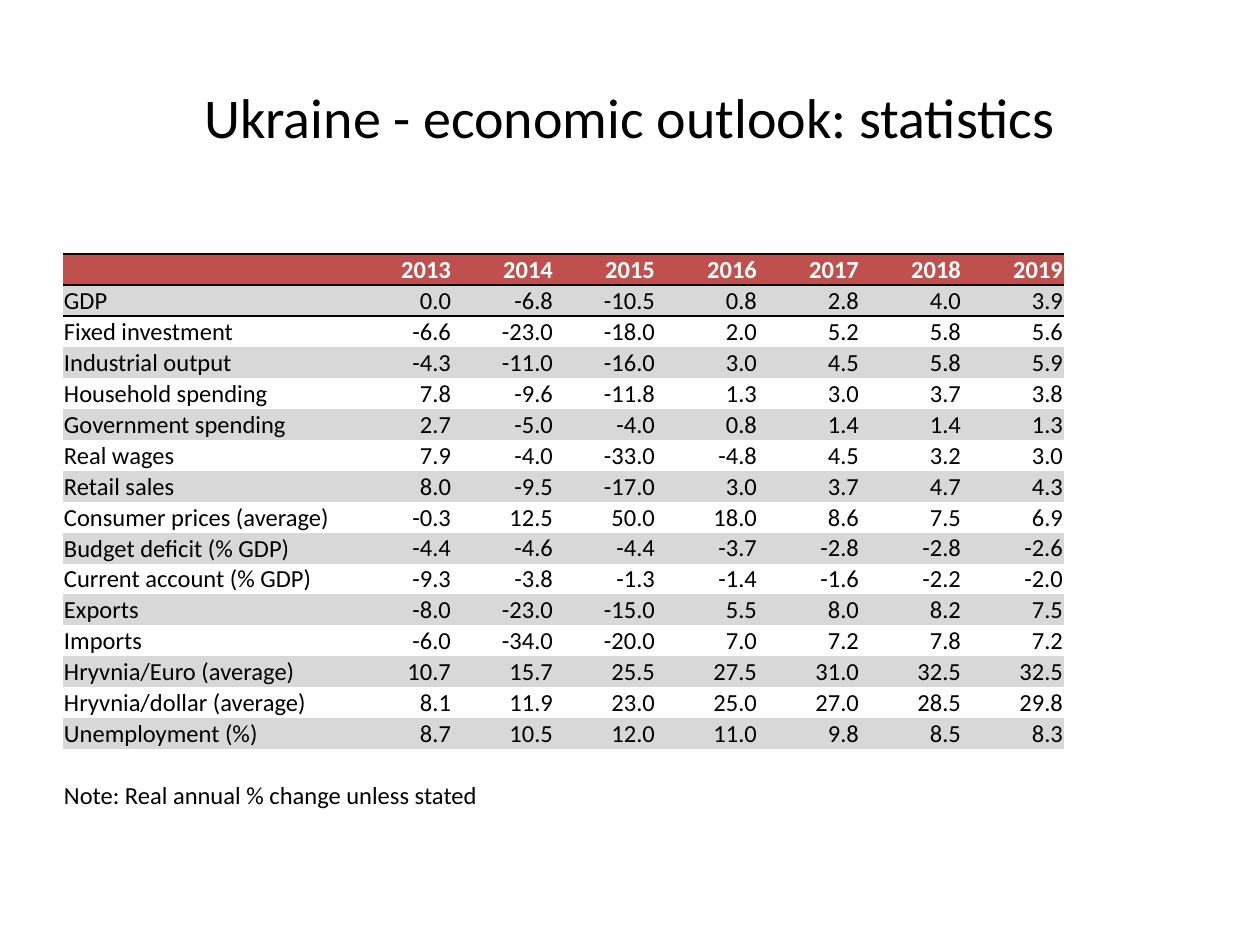
"""Build the slide with Ukraine's economic outlook statistics."""
from lxml.etree import SubElement
from pptx import Presentation
from pptx.dml.color import RGBColor
from pptx.enum.text import MSO_ANCHOR as ANCHOR, PP_ALIGN as ALIGN
from pptx.oxml import parse_xml
from pptx.oxml.ns import nsdecls, qn
from pptx.util import Pt

PX = 914400 / 126
BLACK, WHITE, RED, GREY = "000000", "FFFFFF", "C0504D", "D8D8D8"
NO_STYLE = "{2D5ABB26-0587-4C30-8999-92F81FD0307C}"
LABEL_W, YEAR_W, ROW_H, NOTE_H = 287, 102, 31, 62

ROWS = [
    ("", "2013 2014 2015 2016 2017 2018 2019"),
    ("GDP", "0.0 -6.8 -10.5 0.8 2.8 4.0 3.9"),
    ("Fixed investment", "-6.6 -23.0 -18.0 2.0 5.2 5.8 5.6"),
    ("Industrial output", "-4.3 -11.0 -16.0 3.0 4.5 5.8 5.9"),
    ("Household spending", "7.8 -9.6 -11.8 1.3 3.0 3.7 3.8"),
    ("Government spending", "2.7 -5.0 -4.0 0.8 1.4 1.4 1.3"),
    ("Real wages", "7.9 -4.0 -33.0 -4.8 4.5 3.2 3.0"),
    ("Retail sales", "8.0 -9.5 -17.0 3.0 3.7 4.7 4.3"),
    ("Consumer prices (average)", "-0.3 12.5 50.0 18.0 8.6 7.5 6.9"),
    ("Budget deficit (% GDP)", "-4.4 -4.6 -4.4 -3.7 -2.8 -2.8 -2.6"),
    ("Current account (% GDP)", "-9.3 -3.8 -1.3 -1.4 -1.6 -2.2 -2.0"),
    ("Exports", "-8.0 -23.0 -15.0 5.5 8.0 8.2 7.5"),
    ("Imports", "-6.0 -34.0 -20.0 7.0 7.2 7.8 7.2"),
    ("Hryvnia/Euro (average)", "10.7 15.7 25.5 27.5 31.0 32.5 32.5"),
    ("Hryvnia/dollar (average)", "8.1 11.9 23.0 25.0 27.0 28.5 29.8"),
    ("Unemployment (%)", "8.7 10.5 12.0 11.0 9.8 8.5 8.3"),
    ("Note: Real annual % change unless stated", ""),
]


def px(n):
    return round(n * PX)


def write(p, text, size, color=BLACK, bold=False, align=ALIGN.LEFT):
    p.alignment = align
    if not text:
        SubElement(p._p, qn("a:endParaRPr"), sz=str(size * 100))
        return
    r = p.add_run()
    r.text = text
    for name, value in {"name": "Calibri", "size": Pt(size), "bold": bold}.items():
        setattr(r.font, name, value)
    r.font.color.rgb = RGBColor.from_string(color)


prs = Presentation()
prs.slide_width, prs.slide_height = px(1260), px(945)
s = prs.slides.add_slide(prs.slide_layouts[6])

tf = s.shapes.add_textbox(px(63), px(38), px(1134), px(157)).text_frame
tf.word_wrap = True
tf.vertical_anchor = ANCHOR.MIDDLE
write(tf.paragraphs[0], "Ukraine - economic outlook: statistics", 32, align=ALIGN.CENTER)

last = len(ROWS) - 1
width, height = LABEL_W + 7 * YEAR_W, last * ROW_H + NOTE_H
tbl = s.shapes.add_table(len(ROWS), 8, px(63), px(254), px(width), px(height)).table
tbl.first_row = tbl.horz_banding = False
tbl._tbl.tblPr.find(qn("a:tableStyleId")).text = NO_STYLE
for i, col in enumerate(tbl.columns):
    col.width = px(YEAR_W if i else LABEL_W)

for i, (label, values) in enumerate(ROWS):
    tbl.rows[i].height = px(NOTE_H if i == last else ROW_H)
    texts = [label] + (values.split() or [""] * 7)
    fill = RED if i == 0 else GREY if i % 2 and i < last else None
    borders = {0: ["lnT", "lnB"], 1: ["lnT"]}.get(i, [])
    for j, text in enumerate(texts):
        cell = tbl.cell(i, j)
        margins = {"margin_left": px(1), "margin_right": px(1), "margin_top": px(1), "margin_bottom": 0}
        for name, value in margins.items():
            setattr(cell, name, value)
        cell.vertical_anchor = ANCHOR.MIDDLE if j else ANCHOR.BOTTOM
        write(cell.text_frame.paragraphs[0], text, 14, BLACK if i else WHITE,
              i == 0, ALIGN.RIGHT if j else ALIGN.LEFT)
        if fill:
            cell.fill.solid()
            cell.fill.fore_color.rgb = RGBColor.from_string(fill)
        else:
            cell.fill.background()
        for k, tag in enumerate(borders):
            cell._tc.tcPr.insert(k, parse_xml(
                f'<a:{tag} {nsdecls("a")} w="12700"><a:solidFill>'
                f'<a:srgbClr val="{BLACK}"/></a:solidFill></a:{tag}>'))

tbl.cell(last, 0).merge(tbl.cell(last, 5))
prs.save("out.pptx")
